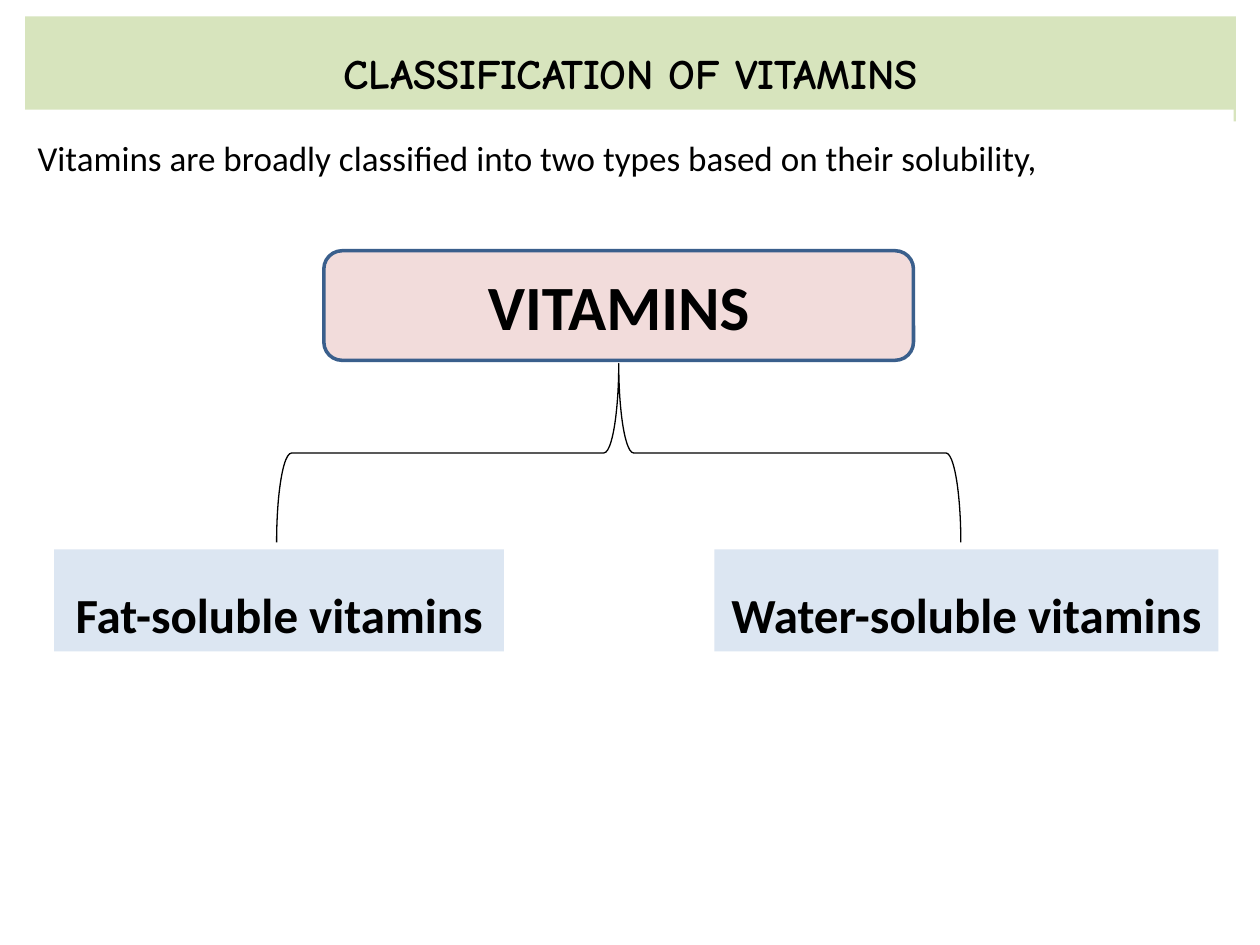
from pptx import Presentation
from pptx.dml.color import RGBColor
from pptx.enum.shapes import MSO_SHAPE
from pptx.enum.text import MSO_ANCHOR, MSO_AUTO_SIZE, PP_ALIGN
from pptx.util import Inches, Pt

RECTANGLE = MSO_SHAPE.RECTANGLE
ROUNDED = MSO_SHAPE.ROUNDED_RECTANGLE
BRACE = MSO_SHAPE.LEFT_BRACE
CENTER, JUSTIFY = PP_ALIGN.CENTER, PP_ALIGN.JUSTIFY
TOP, MIDDLE = MSO_ANCHOR.TOP, MSO_ANCHOR.MIDDLE
GROW, FIXED = MSO_AUTO_SIZE.SHAPE_TO_FIT_TEXT, MSO_AUTO_SIZE.NONE

BLACK = RGBColor(0x00, 0x00, 0x00)
WHITE = RGBColor(0xFF, 0xFF, 0xFF)
GREEN = RGBColor(0xD7, 0xE4, 0xBD)
PINK = RGBColor(0xF2, 0xDC, 0xDB)
PALE_BLUE = RGBColor(0xDC, 0xE6, 0xF2)
BORDER_BLUE = RGBColor(0x3A, 0x5F, 0x8C)

TITLE = "CLASSIFICATION OF VITAMINS"
INTRO = "Vitamins are broadly classified into two types based on their solubility,"
ROOT = "VITAMINS"
TYPES = [  # text, left, width
    ("Fat-soluble vitamins", 0.43, 3.57),
    ("Water-soluble vitamins", 5.67, 4),
]
TYPES_TOP, TYPES_HEIGHT = 4.36, 0.81


def place(shape, left, top, width, height):
    shape.left, shape.top = Inches(left), Inches(top)
    shape.width, shape.height = Inches(width), Inches(height)


def add_shape(page, kind, area, fill=None, line=None, line_width=0.75):
    shape = page.shapes.add_shape(kind, *map(Inches, area))
    shape.shadow.inherit = False
    if fill is None:
        shape.fill.background()
    else:
        shape.fill.solid()
        shape.fill.fore_color.rgb = fill
    if line is None:
        shape.line.fill.background()
    else:
        shape.line.color.rgb = line
        shape.line.width = Pt(line_width)
    return shape


def write(shape, text, size, font="Calibri", bold=True, align=CENTER,
          spacing=1.5, anchor=TOP, fit=GROW):
    frame = shape.text_frame
    frame.word_wrap = True
    frame.auto_size = fit
    frame.vertical_anchor = anchor
    para = frame.paragraphs[0]
    para.alignment = align
    para.line_spacing = spacing
    span = para.add_run()
    span.text = text
    span.font.name = font
    span.font.size = Pt(size)
    span.font.bold = bold
    span.font.color.rgb = BLACK


def main():
    deck = Presentation()
    deck.slide_width, deck.slide_height = Inches(10), Inches(7.5)
    page = deck.slides.add_slide(deck.slide_layouts[5])

    title = page.shapes.title
    place(title, 0.2, 0.13, 9.61, 0.64)
    title.fill.solid()
    title.fill.fore_color.rgb = GREEN
    write(title, TITLE, 24, font="Comic Neue")

    intro = add_shape(page, RECTANGLE, (0.2, 0.87, 9.59, 0.55), WHITE)
    write(intro, INTRO, 20, bold=False, align=JUSTIFY)

    root = add_shape(page, ROUNDED, (2.57, 1.99, 4.68, 0.87), PINK, BORDER_BLUE, 2)
    write(root, ROOT, 36, spacing=1.0, anchor=MIDDLE, fit=FIXED)

    brace = add_shape(page, BRACE, (4.2, 0.88, 1.42, 5.43), line=BLACK)
    brace.rotation = 90

    for text, left, width in TYPES:
        box = add_shape(page, RECTANGLE, (left, TYPES_TOP, width, TYPES_HEIGHT), PALE_BLUE)
        write(box, text, 28)

    deck.save("out.pptx")


if __name__ == "__main__":
    main()
